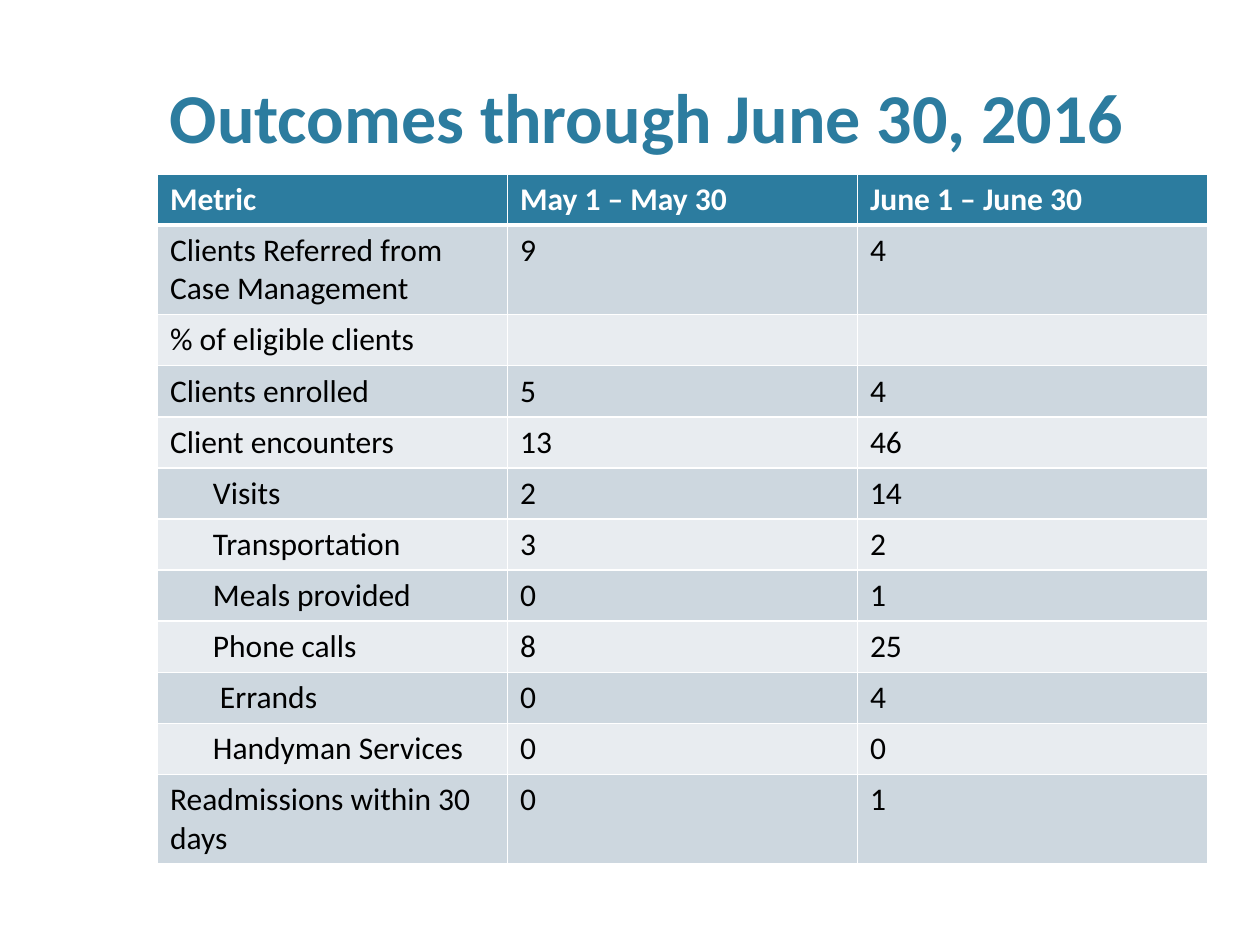
"""Build a slide with a table of client outcomes for May and June 2016."""
from dataclasses import dataclass

import lxml.etree
import pptx
import pptx.dml.color
import pptx.enum.text
import pptx.oxml.ns
import pptx.util

Pt = pptx.util.Pt
COLORS = {
    "accent": "2C7C9F",
    "band_dark": "CDD7DF",
    "band_light": "E8ECF0",
    "text": "000000",
    "white": "FFFFFF",
}
FONT = "Calibri"
COLUMN_WIDTH = 200
ROW_HEIGHT = 29.2
TALL_ROW_HEIGHT = 51


@dataclass
class Metric:
    label: str
    may: str
    june: str
    indent: float = 0
    height: float = ROW_HEIGHT


SUB_INDENT = 24.5
METRICS = [
    Metric("Metric", "May 1 – May 30", "June 1 – June 30"),
    Metric("Clients Referred from Case Management", "9", "4", height=TALL_ROW_HEIGHT),
    Metric("% of eligible clients", "", ""),
    Metric("Clients enrolled", "5", "4"),
    Metric("Client encounters", "13", "46"),
    Metric("Visits", "2", "14", SUB_INDENT),
    Metric("Transportation", "3", "2", SUB_INDENT),
    Metric("Meals provided", "0", "1", SUB_INDENT),
    Metric("Phone calls", "8", "25", SUB_INDENT),
    Metric("Errands", "0", "4", SUB_INDENT + 4),
    Metric("Handyman Services", "0", "0", SUB_INDENT),
    Metric("Readmissions within 30 days", "0", "1", height=TALL_ROW_HEIGHT),
]


def rgb(name: str) -> pptx.dml.color.RGBColor:
    """Return the named colour."""
    return pptx.dml.color.RGBColor.from_string(COLORS[name])


def format_paragraph(para, size: float, color: str, bold: bool) -> None:
    """Format every run of a paragraph."""
    for run in para.runs:
        run.font.name = FONT
        run.font.size = Pt(size)
        run.font.bold = bold
        run.font.color.rgb = rgb(color)


def set_borders(cell, top: float, bottom: float) -> None:
    """Give a cell white borders with the given top and bottom widths."""
    qn = pptx.oxml.ns.qn
    properties = cell._tc.get_or_add_tcPr()
    for side, width in (("L", 1), ("R", 1), ("T", top), ("B", bottom)):
        line = lxml.etree.SubElement(properties, qn(f"a:ln{side}"), w=str(Pt(width)))
        fill = lxml.etree.SubElement(line, qn("a:solidFill"))
        lxml.etree.SubElement(fill, qn("a:srgbClr"), val=COLORS["white"])


def fill_row(table, index: int, metric: Metric) -> None:
    """Write and format one row of the table."""
    header = index == 0
    band = "accent" if header else "band_dark" if index % 2 else "band_light"
    table.rows[index].height = Pt(metric.height)
    for column, text in enumerate((metric.label, metric.may, metric.june)):
        cell = table.cell(index, column)
        set_borders(cell, top=3 if index == 1 else 1, bottom=3 if header else 1)
        cell.fill.solid()
        cell.fill.fore_color.rgb = rgb(band)
        cell.text_frame.text = text
        para = cell.text_frame.paragraphs[0]
        format_paragraph(para, 18, "white" if header else "text", header)
        if column == 0 and metric.indent:
            para._p.get_or_add_pPr().set("marL", str(Pt(metric.indent)))


def add_title(slide, text: str) -> None:
    """Place and format the slide title."""
    title = slide.shapes.title
    title.left, title.top, title.width, title.height = Pt(31), Pt(-11.5), Pt(677), Pt(105)
    title.text_frame.text = text
    title.text_frame.vertical_anchor = pptx.enum.text.MSO_ANCHOR.BOTTOM
    para = title.text_frame.paragraphs[0]
    para.alignment = pptx.enum.text.PP_ALIGN.CENTER
    format_paragraph(para, 40, "accent", True)


def add_metrics_table(slide, metrics: list[Metric]) -> None:
    """Add the table with one row per metric."""
    height = sum(metric.height for metric in metrics)
    frame = slide.shapes.add_table(
        len(metrics), 3, Pt(90), Pt(99.4), Pt(3 * COLUMN_WIDTH), Pt(height)
    )
    for column in frame.table.columns:
        column.width = Pt(COLUMN_WIDTH)
    for index, metric in enumerate(metrics):
        fill_row(frame.table, index, metric)


def main() -> None:
    """Build and save the deck."""
    deck = pptx.Presentation()
    deck.slide_width, deck.slide_height = Pt(720), Pt(540)
    slide = deck.slides.add_slide(deck.slide_layouts[5])
    add_title(slide, "Outcomes through June 30, 2016")
    add_metrics_table(slide, METRICS)
    deck.save("out.pptx")


if __name__ == "__main__":
    main()
